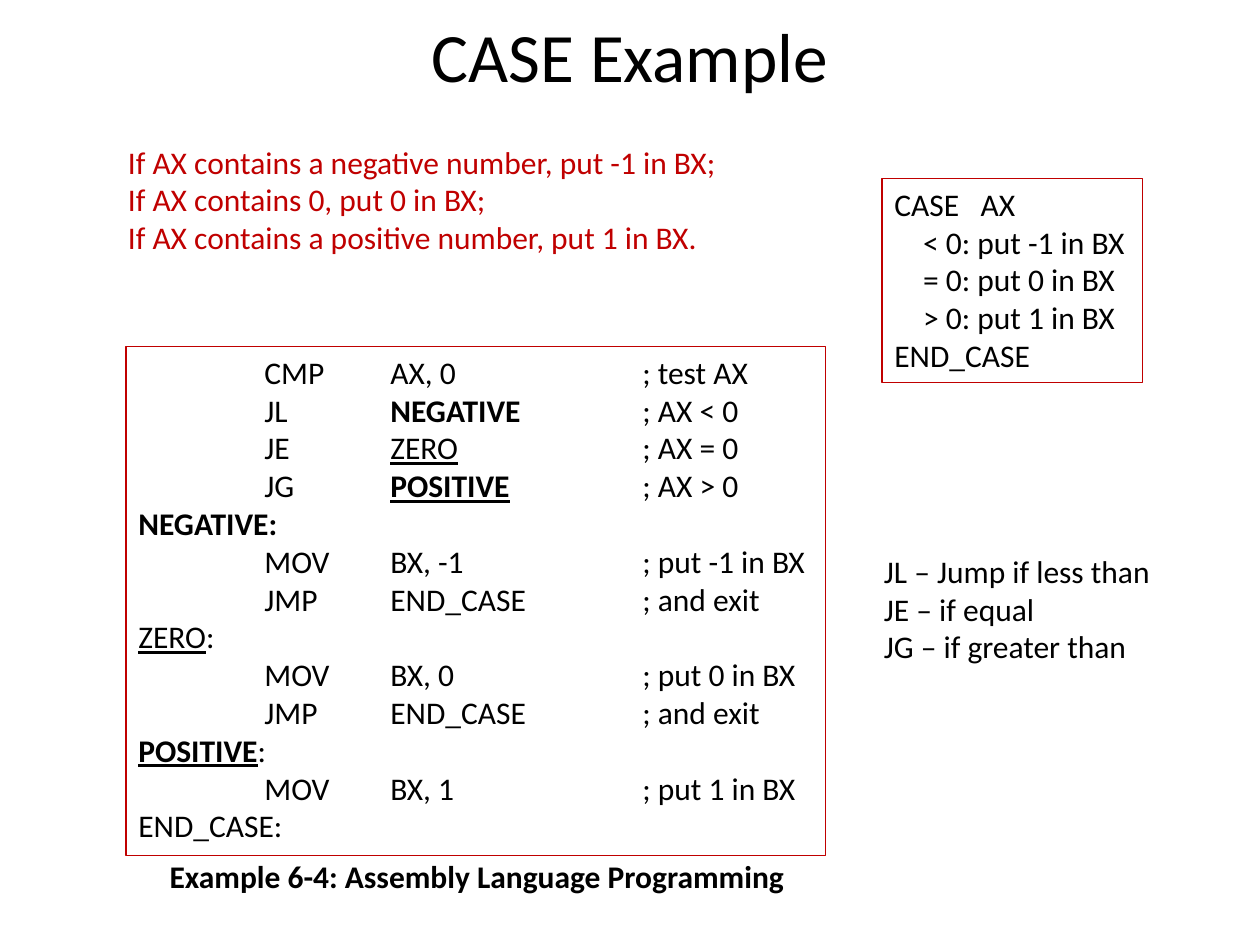
from lxml import etree
from pptx import Presentation
from pptx.dml.color import RGBColor
from pptx.enum.text import MSO_ANCHOR, PP_ALIGN
from pptx.oxml.ns import qn
from pptx.util import Cm, Pt

CENTER = PP_ALIGN.CENTER
MIDDLE = MSO_ANCHOR.MIDDLE
FONT = "Calibri"
COLORS = {"text": "000000", "accent": "C00000"}
CODE_TABS = [2.54 * n for n in range(1, 5)]

RULES = [
    "If AX contains a negative number, put -1 in BX;",
    "If AX contains 0, put 0 in BX;",
    "If AX contains a positive number, put 1 in BX.",
]
BRANCHES = ["< 0: put -1 in BX", "= 0: put 0 in BX", "> 0: put 1 in BX"]
JUMPS = ["JL – Jump if less than", "JE – if equal", "JG – if greater than"]
CODE = [
    [("\tCMP\tAX, 0\t\t; test AX", "")],
    [("\tJL\t", ""), ("NEGATIVE", "b"), ("\t; AX < 0", "")],
    [("\tJE\t", ""), ("ZERO", "u"), ("\t\t; AX = 0", "")],
    [("\tJG\t", ""), ("POSITIVE", "bu"), ("\t\t; AX > 0", "")],
    [("NEGATIVE:", "b")],
    [("\tMOV\tBX, -1\t\t; put -1 in BX", "")],
    [("\tJMP\tEND_CASE\t; and exit", "")],
    [("ZERO", "u"), (":", "")],
    [("\tMOV\tBX, 0\t\t; put 0 in BX", "")],
    [("\tJMP\tEND_CASE\t; and exit", "")],
    [("POSITIVE", "bu"), (":", "")],
    [("\tMOV\tBX, 1\t\t; put 1 in BX", "")],
    [("END_CASE:", "")],
]


def add_run(p, text, style="", color="text", size=18):
    """Add one run, bold for b and underlined for u in style."""
    r = p.add_run()
    r.text = text
    r.font.name = FONT
    r.font.size = Pt(size)
    r.font.bold = "b" in style
    r.font.underline = "u" in style
    r.font.color.rgb = RGBColor.from_string(COLORS[color])


def set_tabs(p, stops):
    """Give a paragraph left tab stops at the given centimetres."""
    tabs = etree.SubElement(p._p.get_or_add_pPr(), qn("a:tabLst"))
    for stop in stops:
        etree.SubElement(tabs, qn("a:tab"), pos=str(Cm(stop)), algn="l")


def add_text(s, box, lines, color="text", framed=False):
    """Add a text box with one paragraph for each list of runs."""
    sp = s.shapes.add_textbox(*map(Cm, box))
    tf = sp.text_frame
    tf.word_wrap = True
    if framed:
        sp.line.color.rgb = RGBColor.from_string(COLORS["accent"])
        sp.line.width = Pt(0.75)
    for i, runs in enumerate(lines):
        p = tf.add_paragraph() if i else tf.paragraphs[0]
        for text, style in runs:
            add_run(p, text, style, color)
    return tf


def plain(lines):
    """Turn strings into lines of one unstyled run."""
    return [[(text, "")] for text in lines]


def add_title(s, box, text):
    """Place and fill the title placeholder."""
    sp = s.shapes.title
    sp.left, sp.top, sp.width, sp.height = map(Cm, box)
    sp.text_frame.vertical_anchor = MIDDLE
    p = sp.text_frame.paragraphs[0]
    p.alignment = CENTER
    add_run(p, text, size=39.6)


def add_case(s, box):
    """Add the framed CASE block with indented branches."""
    tf = add_text(s, box, plain(["CASE\tAX", *BRANCHES, "END_CASE"]), framed=True)
    set_tabs(tf.paragraphs[0], [1.74])
    for p in tf.paragraphs[1:-1]:
        p._p.get_or_add_pPr().set("marL", str(Cm(0.58)))


def add_listing(s, box):
    """Add the framed assembly listing and the caption under it."""
    left, top, width, height = box
    tf = add_text(s, box, CODE, framed=True)
    for p in tf.paragraphs:
        set_tabs(p, CODE_TABS)
    caption = (left + 0.63, top + height - 0.1, width - 1, 1.02)
    add_text(s, caption, [[("Example 6-4: Assembly Language Programming", "b")]])


def main():
    """Build and save the slide."""
    prs = Presentation()
    prs.slide_width, prs.slide_height = Cm(25.4), Cm(19.05)
    s = prs.slides.add_slide(prs.slide_layouts[5])
    add_title(s, (1.27, 0.21, 22.86, 1.78), "CASE Example")
    add_text(s, (2.33, 2.75, 12.53, 2.57), plain(RULES), "accent")
    add_case(s, (17.78, 3.6, 5.26, 4.11))
    add_listing(s, (2.54, 6.99, 14.1, 10.26))
    add_text(s, (17.57, 11, 7.42, 3.33), plain(JUMPS))
    prs.save("out.pptx")


if __name__ == "__main__":
    main()
